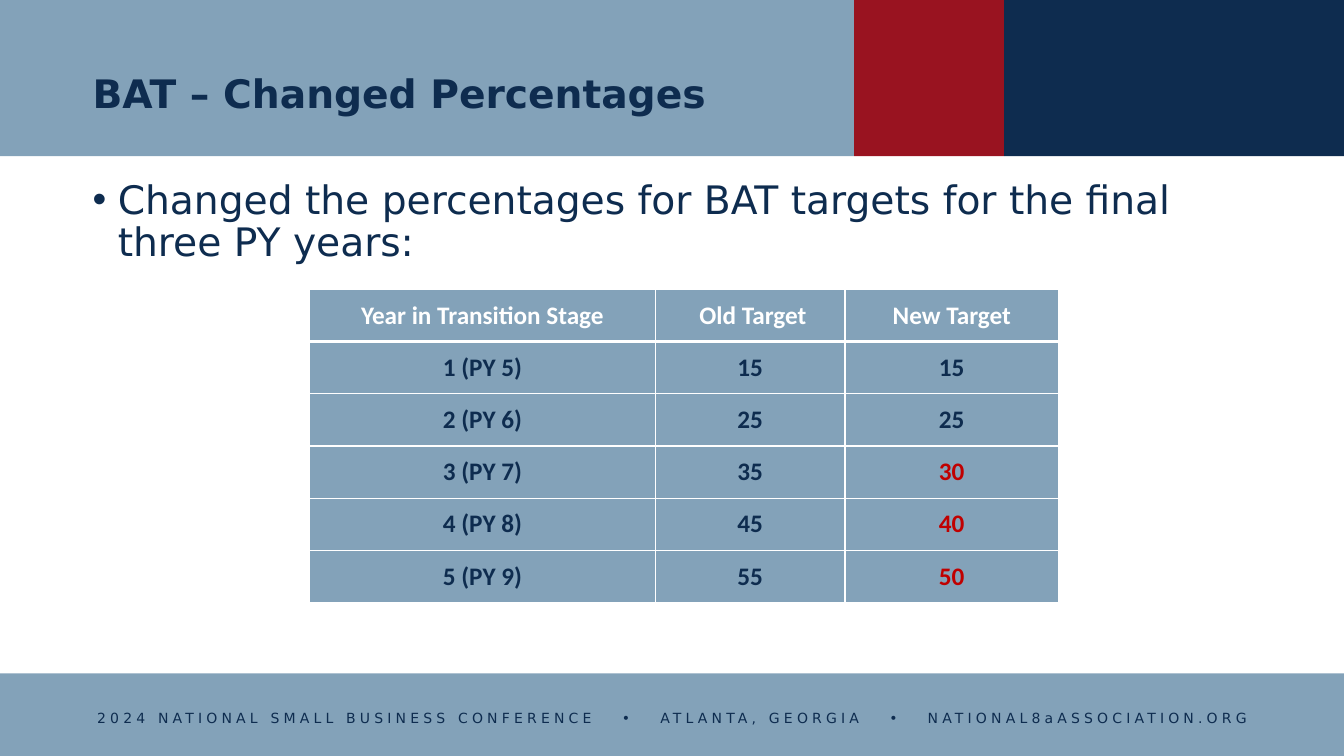
from lxml.etree import SubElement
from pptx import Presentation
from pptx.dml.color import RGBColor
from pptx.enum.shapes import MSO_SHAPE
from pptx.enum.text import MSO_ANCHOR, PP_ALIGN
from pptx.oxml.ns import qn
from pptx.util import Inches, Pt

COLORS = {
    "steel": "83A2B9",
    "crimson": "991320",
    "navy": "0E2C4F",
    "white": "FFFFFF",
    "changed": "C00000",
}
SLIDE_WIDTH, SLIDE_HEIGHT = 13.33, 7.5
TEXT_FONT, TABLE_FONT = "DejaVu Sans", "Calibri"

HEADERS = ["Year in Transition Stage", " Old Target", "New Target"]
TARGETS = [
    ("1 (PY 5)", "15", "15"),
    ("2 (PY 6)", "25", "25"),
    ("3 (PY 7)", "35", "30"),
    ("4 (PY 8)", "45", "40"),
    ("5 (PY 9)", "55", "50"),
]
FOOTER_PARTS = [
    "2024 NATIONAL SMALL BUSINESS CONFERENCE",
    "•",
    "ATLANTA, GEORGIA",
    "•",
    "NATIONAL8aASSOCIATION.ORG",
]


def rgb(name):
    return RGBColor.from_string(COLORS[name])


def add_band(slide, left, top, width, height, color):
    band = slide.shapes.add_shape(
        MSO_SHAPE.RECTANGLE, Inches(left), Inches(top), Inches(width), Inches(height))
    band.shadow.inherit = False
    band.fill.solid()
    band.fill.fore_color.rgb = rgb(color)
    band.line.fill.background()


def add_text_frame(slide, left, top, width, height, anchor=MSO_ANCHOR.TOP):
    box = slide.shapes.add_textbox(
        Inches(left), Inches(top), Inches(width), Inches(height))
    frame = box.text_frame
    frame.word_wrap = True
    frame.vertical_anchor = anchor
    return frame


def add_run(paragraph, text, size, color="navy", bold=False, font=TEXT_FONT):
    run = paragraph.add_run()
    run.text = text
    run.font.size = Pt(size)
    run.font.name = font
    run.font.bold = bold
    run.font.color.rgb = rgb(color)
    return run


def add_header(slide, left, top, height):
    for width, color in ((8.47, "steel"), (1.49, "crimson"), (3.37, "navy")):
        add_band(slide, left, top, width, height, color)
        left += width


def add_title(slide, left, top, width, height):
    frame = add_text_frame(slide, left, top, width, height, MSO_ANCHOR.BOTTOM)
    paragraph = frame.paragraphs[0]
    paragraph.line_spacing = 0.85
    add_run(paragraph, "BAT – Changed Percentages", 28, bold=True)


def add_body(slide, left, top, width, height):
    paragraph = add_text_frame(slide, left, top, width, height).paragraphs[0]
    paragraph.line_spacing = 0.9
    properties = paragraph._p.get_or_add_pPr()
    properties.set("marL", str(Inches(0.25)))
    properties.set("indent", str(Inches(-0.25)))
    SubElement(properties, qn("a:buFont"), typeface="Arial")
    SubElement(properties, qn("a:buChar"), char="•")
    add_run(paragraph,
            "Changed the percentages for BAT targets for the final three PY years:", 28)


def add_footer(slide, left, top, width, height):
    """Band with letter-spaced text and wider gaps around the dots."""
    add_band(slide, left, top, width, height, "steel")
    frame = add_text_frame(slide, left, top + 0.31, width, 0.27)
    paragraph = frame.paragraphs[0]
    paragraph.alignment = PP_ALIGN.CENTER
    letter_spacing, gap_spacing = Pt(3), Pt(15.4)
    for index, part in enumerate(FOOTER_PARTS):
        pieces = [(part, letter_spacing)]
        if index:
            pieces.insert(0, (" ", gap_spacing))
        for text, spacing in pieces:
            run = add_run(paragraph, text, 10)
            run.font._element.set("spc", str(round(spacing.pt * 100)))


def set_borders(cell, widths):
    """Draw white borders; widths maps the sides L, R, T, B to points."""
    properties = cell._tc.get_or_add_tcPr()
    for side, width in widths.items():
        line = SubElement(properties, qn(f"a:ln{side}"), w=str(Pt(width)))
        fill = SubElement(line, qn("a:solidFill"))
        SubElement(fill, qn("a:srgbClr"), val=COLORS["white"])


def fill_cell(cell, text, color, borders):
    set_borders(cell, borders)
    cell.fill.solid()
    cell.fill.fore_color.rgb = rgb("steel")
    cell.vertical_anchor = MSO_ANCHOR.MIDDLE
    paragraph = cell.text_frame.paragraphs[0]
    paragraph.alignment = PP_ALIGN.CENTER
    add_run(paragraph, text, 18, color, bold=True, font=TABLE_FONT)


def add_target_table(slide, left, top, width, height):
    """Table of targets; a new target that differs from the old one is red."""
    rows = [HEADERS, *TARGETS]
    table = slide.shapes.add_table(
        len(rows), len(HEADERS),
        Inches(left), Inches(top), Inches(width), Inches(height)).table
    for column, column_width in zip(table.columns, (3.43, 1.88, 2.12)):
        column.width = Inches(column_width)
    for row_index, row in enumerate(rows):
        borders = {"L": 1, "R": 1,
                   "T": 3 if row_index == 1 else 1,
                   "B": 3 if row_index == 0 else 1}
        for column_index, text in enumerate(row):
            if row_index == 0:
                color = "white"
            elif column_index == 2 and text != row[1]:
                color = "changed"
            else:
                color = "navy"
            fill_cell(table.cell(row_index, column_index), text, color, borders)


def main():
    presentation = Presentation()
    presentation.slide_width = Inches(SLIDE_WIDTH)
    presentation.slide_height = Inches(SLIDE_HEIGHT)
    slide = presentation.slides.add_slide(presentation.slide_layouts[6])
    add_header(slide, 0, 0, 1.55)
    add_footer(slide, 0, 6.68, SLIDE_WIDTH, 0.82)
    add_body(slide, 0.82, 1.74, 11.75, 4.64)
    add_title(slide, 0.82, 0.57, 6.93, 0.64)
    add_target_table(slide, 3.07, 2.87, 7.43, 3.11)
    presentation.save("out.pptx")


if __name__ == "__main__":
    main()
